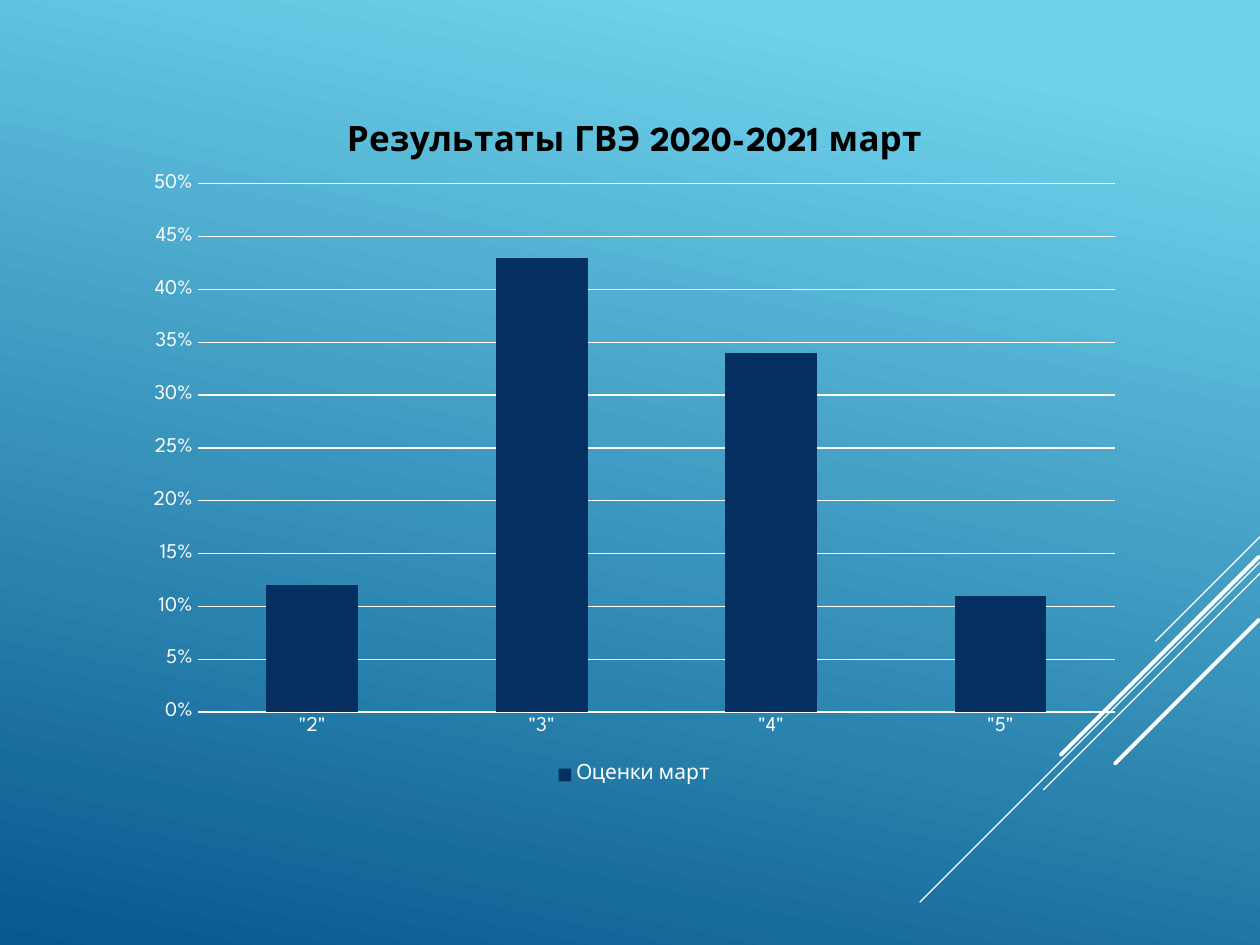
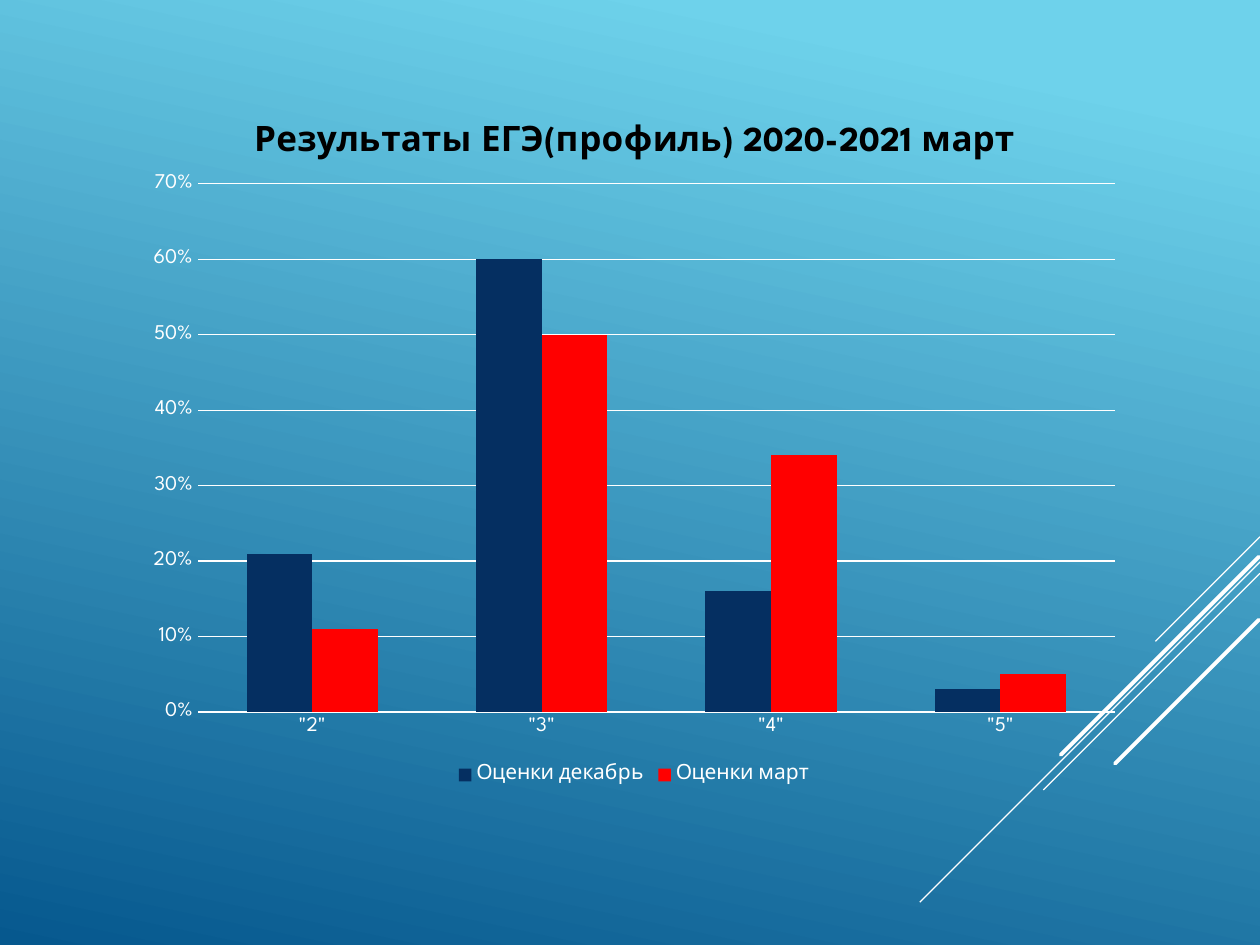
from lxml import etree
from pptx import Presentation
from pptx.chart.data import CategoryChartData
from pptx.dml.color import RGBColor
from pptx.enum.chart import XL_CHART_TYPE, XL_LEGEND_POSITION, XL_TICK_MARK
from pptx.enum.shapes import MSO_CONNECTOR
from pptx.oxml import parse_xml
from pptx.oxml.ns import nsdecls, qn
from pptx.util import Inches, Pt

COLUMNS = XL_CHART_TYPE.COLUMN_CLUSTERED
LEGEND_BOTTOM = XL_LEGEND_POSITION.BOTTOM
NO_TICKS = XL_TICK_MARK.NONE
STRAIGHT = MSO_CONNECTOR.STRAIGHT

FONT = "League Spartan"
WHITE, BLACK, NAVY, RED = "FFFFFF", "000000", "052F61", "FF0000"
BACKGROUND_STOPS = ((0.1, "6ED2EB"), (1.0, "06588E"))
BACKGROUND_ANGLE = 360 - 102  # counted anticlockwise

THIN, THICK = 0.75, 2.25
# Right end x, right end y, drop of the 45 degree line, width
CORNER_LINES = (
    (10, 4.26, 0.83, THIN),
    (10, 4.46, 2.7, THIN),
    (10, 4.55, 1.72, THIN),
    (9.99, 4.42, 1.57, THICK),
    (9.99, 4.92, 1.14, THICK),
)
CHART_FRAME = (1.06, 0.76, 7.95, 5.51)
PLOT_SHARES = {"x": 0.064, "y": 0.127, "w": 0.916, "h": 0.761}

GRADES = ('"2"', '"3"', '"4"', '"5"')
# Title, top of the value axis, axis step, series
RESULTS = (
    ("Результаты ГВЭ 2020-2021 март", 0.5, 0.05,
     (("Оценки март", (0.12, 0.43, 0.34, 0.11), NAVY),)),
    ("Результаты ЕГЭ(профиль) 2020-2021 март", 0.7, 0.1,
     (("Оценки декабрь", (0.21, 0.6, 0.16, 0.03), NAVY),
      ("Оценки март", (0.11, 0.5, 0.34, 0.05), RED))),
)


def rgb(value):
    return RGBColor.from_string(value)


def style_font(font, size=12, color=WHITE, bold=False):
    font.name, font.size, font.bold = FONT, Pt(size), bold
    font.color.rgb = rgb(color)


def write_text(frame, text, **style):
    span = frame.paragraphs[0].add_run()
    span.text = text
    style_font(span.font, **style)


def paint_background(master):
    fill = master.background.fill
    fill.gradient()
    fill.gradient_angle = BACKGROUND_ANGLE
    for stop, (position, color) in zip(fill.gradient_stops, BACKGROUND_STOPS):
        stop.position = position
        stop.color.rgb = rgb(color)


def add_corner_lines(page):
    for right, top, drop, width in CORNER_LINES:
        ends = (right, top, right - drop, top + drop)
        line = page.shapes.add_connector(STRAIGHT, *map(Inches, ends))
        line.line.color.rgb = rgb(WHITE)
        line.line.width = Pt(width)
        properties = line._element.spPr
        if width == THICK:
            properties.find(qn("a:ln")).set("cap", "rnd")
        etree.SubElement(properties, qn("a:effectLst"))


def fix_plot_area(chart):
    """Place the inner plot area by shares of the chart frame."""
    plot_area = chart._chartSpace.chart.plotArea
    for layout in plot_area.findall(qn("c:layout")):
        plot_area.remove(layout)
    shares = "".join(f'<c:{key} val="{share}"/>' for key, share in PLOT_SHARES.items())
    plot_area.insert(0, parse_xml(
        f'<c:layout {nsdecls("c")}><c:manualLayout><c:layoutTarget val="inner"/>'
        f'<c:xMode val="edge"/><c:yMode val="edge"/>{shares}'
        '</c:manualLayout></c:layout>'))


def style_axis(axis):
    axis.major_tick_mark = axis.minor_tick_mark = NO_TICKS
    axis.format.line.fill.background()
    style_font(axis.tick_labels.font)


def style_value_axis(axis, top, step):
    style_axis(axis)
    axis.minimum_scale, axis.maximum_scale, axis.major_unit = 0, top, step
    axis.tick_labels.number_format = "0%"
    axis.tick_labels.number_format_is_linked = False
    grid = axis.major_gridlines.format.line
    grid.color.rgb = rgb(WHITE)
    grid.width = Pt(THIN)


def add_results_chart(page, title, top, step, series):
    data = CategoryChartData(number_format="0%")
    data.categories = GRADES
    for name, values, _ in series:
        data.add_series(name, values)
    chart = page.shapes.add_chart(COLUMNS, *map(Inches, CHART_FRAME), data).chart
    style_font(chart.font, size=10)
    write_text(chart.chart_title.text_frame, title, size=20, color=BLACK, bold=True)
    chart.chart_title.include_in_layout = False
    style_axis(chart.category_axis)
    style_value_axis(chart.value_axis, top, step)
    chart.has_legend = True
    chart.legend.position = LEGEND_BOTTOM
    chart.legend.include_in_layout = False
    style_font(chart.legend.font)
    plot = chart.plots[0]
    plot.gap_width, plot.overlap = 150, 0
    plot.vary_by_categories = False
    for bars, (_, _, color) in zip(plot.series, series):
        bars.format.fill.solid()
        bars.format.fill.fore_color.rgb = rgb(color)
    fix_plot_area(chart)


def main():
    deck = Presentation()
    deck.slide_width, deck.slide_height = Inches(10), Inches(7.5)
    paint_background(deck.slide_master)
    blank = deck.slide_layouts.get_by_name("Blank")
    for result in RESULTS:
        page = deck.slides.add_slide(blank)
        add_corner_lines(page)
        add_results_chart(page, *result)
    deck.save("out.pptx")


if __name__ == "__main__":
    main()
